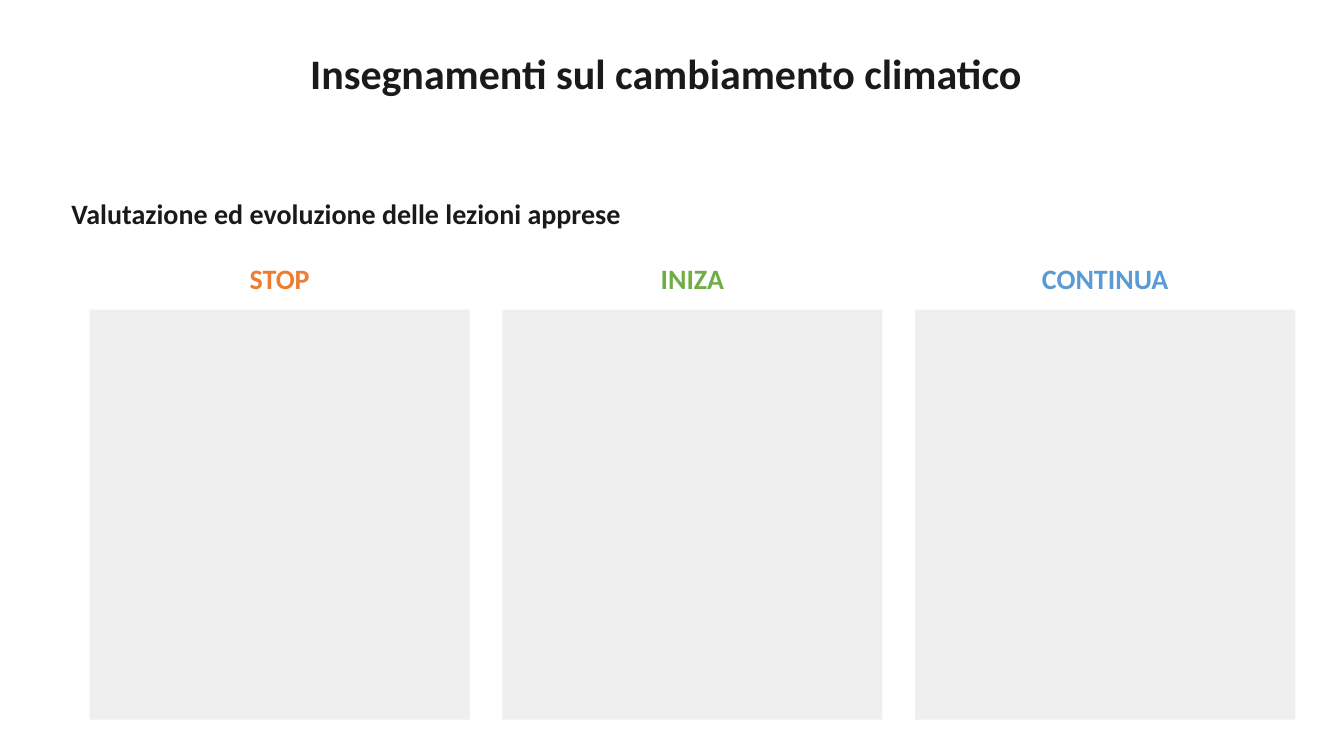
from pptx import Presentation
from pptx.dml.color import RGBColor
from pptx.enum.shapes import MSO_SHAPE as Shape
from pptx.enum.text import MSO_ANCHOR as Anchor, PP_ALIGN as Align
from pptx.util import Pt

COLORS = {
    "text": "1A1A1A",
    "stop": "ED7D31",
    "start": "70AD47",
    "continue": "5B9BD5",
    "panel": "EFEFEF",
}
COLUMNS = [("STOP", "stop"), ("INIZA", "start"), ("CONTINUA", "continue")]


def color(name):
    """Return the named colour."""
    return RGBColor.from_string(COLORS[name])


def add_text(slide, box, text, size, color_name, align, margin_top=3.6):
    """Add one bold line of text in the given box."""
    shape = slide.shapes.add_textbox(*(Pt(length) for length in box))
    frame = shape.text_frame
    frame.word_wrap = True
    frame.vertical_anchor = Anchor.TOP
    frame.margin_top = Pt(margin_top)
    paragraph = frame.paragraphs[0]
    paragraph.alignment = align
    paragraph.line_spacing = 0.9
    run = paragraph.add_run()
    run.text = text
    run.font.name = "Calibri"
    run.font.size = Pt(size)
    run.font.bold = True
    run.font.color.rgb = color(color_name)


def add_column(slide, box, heading, color_name):
    """Add a coloured heading above an empty panel inside the given box."""
    left, top, width, height = box
    heading_height, inset = 35.3, 7.2
    add_text(slide, (left, top, width, heading_height), heading, 20, color_name, Align.CENTER)
    panel = slide.shapes.add_shape(
        Shape.RECTANGLE,
        Pt(left + inset),
        Pt(top + heading_height),
        Pt(width - 2 * inset),
        Pt(height - heading_height),
    )
    panel.shadow.inherit = False
    panel.fill.solid()
    panel.fill.fore_color.rgb = color("panel")
    panel.line.fill.background()


def add_columns(slide, box):
    """Spread the columns evenly across the given box."""
    left, top, width, height = box
    gap = 9
    column_width = (width - gap * (len(COLUMNS) - 1)) / len(COLUMNS)
    for index, (heading, color_name) in enumerate(COLUMNS):
        column_left = left + index * (column_width + gap)
        add_column(slide, (column_left, top, column_width, height), heading, color_name)


def main():
    """Build the slide and save the presentation."""
    presentation = Presentation()
    presentation.slide_width, presentation.slide_height = Pt(960), Pt(540)
    slide = presentation.slides.add_slide(presentation.slide_layouts[6])
    add_text(slide, (159.8, 32.4, 632.2, 77), "Insegnamenti sul cambiamento climatico",
             30, "text", Align.CENTER, margin_top=5.5)
    add_text(slide, (43.9, 139.7, 602.6, 46), "Valutazione ed evoluzione delle lezioni apprese",
             20, "text", Align.LEFT)
    add_columns(slide, (56.9, 185.8, 875.5, 328.3))
    presentation.save("out.pptx")


if __name__ == "__main__":
    main()
